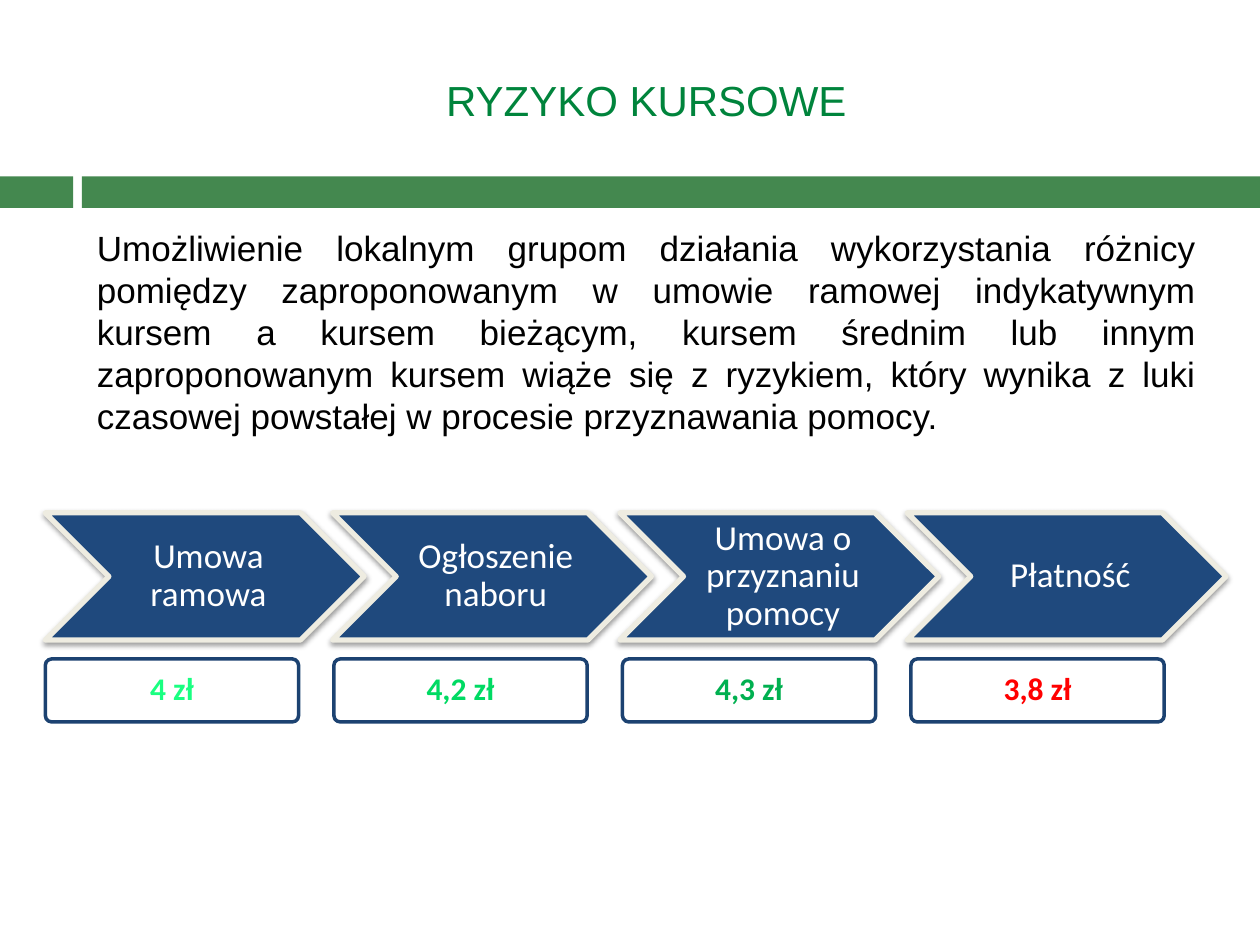
from lxml import etree
from pptx import Presentation
from pptx.dml.color import RGBColor
from pptx.enum.shapes import MSO_SHAPE
from pptx.enum.text import MSO_ANCHOR, PP_ALIGN
from pptx.oxml.ns import qn
from pptx.util import Inches, Pt

RECTANGLE = MSO_SHAPE.RECTANGLE
CHEVRON = MSO_SHAPE.CHEVRON
ROUNDED = MSO_SHAPE.ROUNDED_RECTANGLE
CENTER, JUSTIFY = PP_ALIGN.CENTER, PP_ALIGN.JUSTIFY
MIDDLE = MSO_ANCHOR.MIDDLE

TITLE = "RYZYKO KURSOWE"
EXPLANATION = (
    "Umożliwienie lokalnym grupom działania wykorzystania różnicy pomiędzy "
    "zaproponowanym w umowie ramowej indykatywnym kursem a kursem bieżącym, "
    "kursem średnim lub innym zaproponowanym kursem wiąże się z ryzykiem, "
    "który wynika z luki czasowej powstałej w procesie przyznawania pomocy."
)
# Stage, exchange rate, colour of the rate
STAGES = [
    ("Umowa ramowa", "4 zł", "19FF81"),
    ("Ogłoszenie naboru", "4,2 zł", "00DA63"),
    ("Umowa o przyznaniu pomocy", "4,3 zł", "00B050"),
    ("Płatność", "3,8 zł", "FF0000"),
]
FIRST_LEFT = 0.36
STAGE_PITCH = 2.28
RATE_PITCH = 2.29


def rgb(color):
    return RGBColor.from_string(color)


def write(frame, text, size, font, color, align=CENTER, bold=False):
    frame.word_wrap = True
    paragraph = frame.paragraphs[0]
    paragraph.alignment = align
    run = paragraph.add_run()
    run.text = text
    run.font.size = Pt(size)
    run.font.name = font
    run.font.bold = bold
    run.font.color.rgb = rgb(color)
    return paragraph


def add_block(slide, kind, left, top, width, height, fill, line=None, line_width=0):
    block = slide.shapes.add_shape(
        kind, Inches(left), Inches(top), Inches(width), Inches(height))
    block.shadow.inherit = False
    block.fill.solid()
    block.fill.fore_color.rgb = rgb(fill)
    if line:
        block.line.color.rgb = rgb(line)
        block.line.width = Pt(line_width)
    else:
        block.line.fill.background()
    return block


def add_soft_shadow(block):
    effects = block.element.spPr.find(qn("a:effectLst"))
    shadow = etree.SubElement(
        effects, qn("a:outerShdw"), blurRad=str(Pt(3.1)), dist=str(Pt(1.6)),
        dir="5400000", rotWithShape="0")
    color = etree.SubElement(shadow, qn("a:srgbClr"), val="000000")
    etree.SubElement(color, qn("a:alpha"), val="38000")


def label_block(block, text, size, color, left_inset=0.03, bold=False):
    frame = block.text_frame
    frame.vertical_anchor = MIDDLE
    frame.margin_left = Inches(left_inset)
    frame.margin_right = frame.margin_top = frame.margin_bottom = Inches(0.03)
    paragraph = write(frame, text, size, "Calibri", color, bold=bold)
    paragraph.line_spacing = 0.9


def add_title(slide):
    title = slide.shapes.title
    title.left, title.top = Inches(0.67), Inches(0.25)
    title.width, title.height = Inches(8.92), Inches(1.08)
    title.text_frame.vertical_anchor = MIDDLE
    write(title.text_frame, TITLE, 24, "Arial", "00843C")


def add_explanation(slide):
    box = slide.shapes.add_textbox(
        Inches(0.67), Inches(1.75), Inches(8.92), Inches(2.1))
    write(box.text_frame, EXPLANATION, 20, "Arial", "000000", JUSTIFY)


def add_stage(slide, index, name):
    stage = add_block(slide, CHEVRON, FIRST_LEFT + index * STAGE_PITCH, 4.07,
                      2.53, 1.01, "1F497D", "EEECE1", 3)
    add_soft_shadow(stage)
    label_block(stage, name, 20, "FFFFFF", left_inset=0.09)


def add_rate(slide, index, rate, color):
    card = add_block(slide, ROUNDED, FIRST_LEFT + index * RATE_PITCH, 5.23,
                     2.01, 0.5, "FFFFFF", "1C4271", 2)
    card.adjustments[0] = 0.1
    label_block(card, rate, 18, color, bold=True)


def main():
    presentation = Presentation()
    presentation.slide_width, presentation.slide_height = Inches(10), Inches(7.5)
    slide = presentation.slides.add_slide(presentation.slide_layouts[5])
    for left, width in ((0, 0.58), (0.65, 9.35)):
        add_block(slide, RECTANGLE, left, 1.4, width, 0.25, "44884F")
    add_title(slide)
    add_explanation(slide)
    for index, (name, rate, color) in enumerate(STAGES):
        add_stage(slide, index, name)
        add_rate(slide, index, rate, color)
    presentation.save("out.pptx")


if __name__ == "__main__":
    main()
